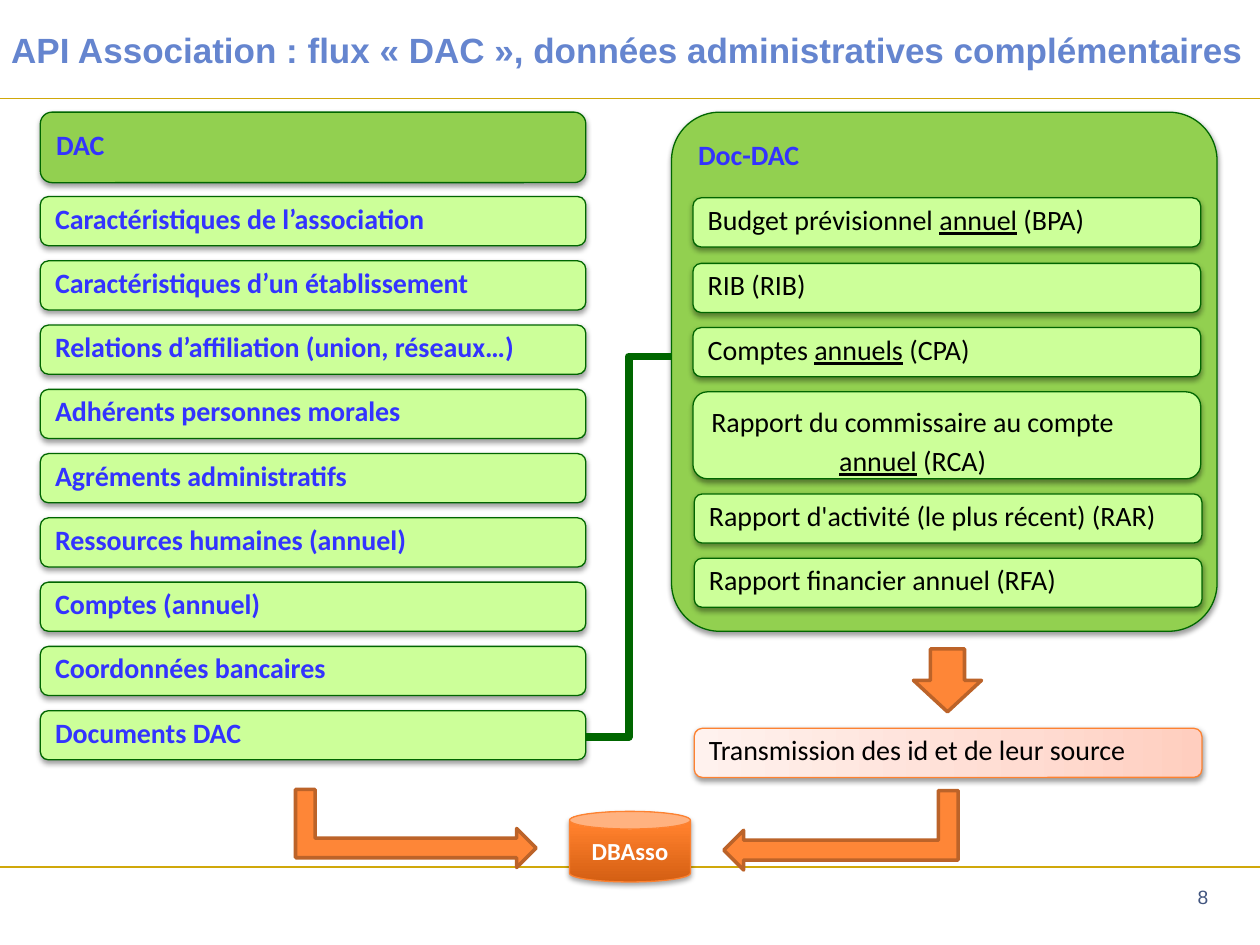
from dataclasses import dataclass

from lxml.etree import SubElement
from pptx import Presentation
from pptx.dml.color import RGBColor
from pptx.enum.shapes import MSO_CONNECTOR, MSO_SHAPE
from pptx.enum.text import MSO_ANCHOR, PP_ALIGN
from pptx.oxml.ns import qn
from pptx.util import Inches, Pt


@dataclass(frozen=True)
class Theme:
    heading_font: str = "Arial"
    body_font: str = "Calibri"
    title_size: int = 20
    body_size: int = 16
    database_size: int = 14
    number_size: int = 11
    title: str = "6585CF"
    number: str = "42557F"
    rule: str = "D0A80A"
    panel: str = "92D050"
    row: str = "CCFF99"
    outline: str = "006600"
    label: str = "3333FF"
    black: str = "000000"
    white: str = "FFFFFF"
    arrow: str = "FE8637"
    arrow_edge: str = "BC6329"
    orange_edge: str = "FD8231"
    pink_stops: tuple = ((0, "FFCEBF"), (35, "FFDCD2"), (100, "FFF2EE"))
    orange_stops: tuple = ((0, "D45F13"), (80, "FF802C"), (100, "FF812E"))


class FlowSlide:
    def __init__(self, slide, theme):
        self.shapes = slide.shapes
        self.theme = theme

    def set_text(self, frame, text, size, color, bold=False, font=None,
                 align=PP_ALIGN.LEFT, spacing=None):
        """Fill a text frame; parts between underscores are underlined."""
        frame.word_wrap = True
        frame.vertical_anchor = MSO_ANCHOR.MIDDLE
        paragraph = frame.paragraphs[0]
        paragraph.alignment = align
        paragraph.line_spacing = spacing
        for index, part in enumerate(text.split("_")):
            run = paragraph.add_run()
            run.text = part
            run.font.name = font or self.theme.body_font
            run.font.size = Pt(size)
            run.font.bold = bold
            run.font.color.rgb = RGBColor.from_string(color)
            if index % 2:
                run.font.underline = True

    def heading(self, left, top, width, height, text, size, color, **style):
        frame = self.shapes.add_textbox(
            Inches(left), Inches(top), Inches(width), Inches(height)).text_frame
        self.set_text(frame, text, size, color, font=self.theme.heading_font, **style)
        return frame

    def solid(self, kind, left, top, width, height, fill, edge, weight):
        shape = self.shapes.add_shape(
            kind, Inches(left), Inches(top), Inches(width), Inches(height))
        shape.shadow.inherit = False
        shape.fill.solid()
        shape.fill.fore_color.rgb = RGBColor.from_string(fill)
        shape.line.color.rgb = RGBColor.from_string(edge)
        shape.line.width = Pt(weight)
        return shape

    def cast_shadow(self, shape, opacity=38):
        effects = shape._element.spPr.find(qn("a:effectLst"))
        shadow = SubElement(effects, qn("a:outerShdw"), blurRad=str(Pt(3.1)),
                            dist=str(Pt(1.6)), dir="5400000", rotWithShape="0")
        tint = SubElement(shadow, qn("a:srgbClr"), val=self.theme.black)
        SubElement(tint, qn("a:alpha"), val=str(opacity * 1000))

    def shade(self, shape, stops, angle):
        shape.fill.gradient()
        shape.fill.gradient_angle = angle
        stop_list = shape._element.spPr.find(".//" + qn("a:gsLst"))
        for stop in list(stop_list):
            stop_list.remove(stop)
        for position, color in stops:
            stop = SubElement(stop_list, qn("a:gs"), pos=str(position * 1000))
            SubElement(stop, qn("a:srgbClr"), val=color)

    def box(self, left, top, width, height, text, color, bold=False, fill=None,
            edge=None, corner=0.167, spacing=0.8):
        theme = self.theme
        shape = self.solid(MSO_SHAPE.ROUNDED_RECTANGLE, left, top, width, height,
                           fill or theme.row, edge or theme.outline, 0.75)
        shape.adjustments[0] = corner
        self.cast_shadow(shape)
        self.set_text(shape.text_frame, text, theme.body_size, color, bold,
                      spacing=spacing)
        return shape

    def arrow(self, kind, left, top, width, height, rotation=0, flipped=False):
        shape = self.solid(kind, left, top, width, height,
                           self.theme.arrow, self.theme.arrow_edge, 2)
        shape.rotation = rotation
        if flipped:
            shape._element.spPr.find(qn("a:xfrm")).set("flipV", "1")

    def database(self, left, top, width, height, text):
        theme = self.theme
        shape = self.solid(MSO_SHAPE.CAN, left, top, width, height,
                           theme.arrow, theme.orange_edge, 0.75)
        self.shade(shape, theme.orange_stops, 90)
        self.cast_shadow(shape, 35)
        self.set_text(shape.text_frame, text, theme.database_size, theme.white, True,
                      align=PP_ALIGN.CENTER)
        shape.text_frame.word_wrap = False

    def line(self, start, end, color, weight, kind=MSO_CONNECTOR.STRAIGHT):
        connector = self.shapes.add_connector(
            kind, *(Inches(value) for value in (*start, *end)))
        connector.line.color.rgb = RGBColor.from_string(color)
        connector.line.width = Pt(weight)
        SubElement(connector._element.spPr, qn("a:effectLst"))


DAC_SECTIONS = [
    "Caractéristiques de l’association",
    "Caractéristiques d’un établissement",
    "Relations d’affiliation (union, réseaux…)",
    "Adhérents personnes morales",
    "Agréments administratifs",
    "Ressources humaines (annuel)",
    "Comptes (annuel)",
    "Coordonnées bancaires",
    "Documents DAC",
]
DOCUMENTS = [
    (5.5, 1.57, "Budget prévisionnel _annuel_ (BPA)"),
    (5.5, 2.09, "RIB (RIB)"),
    (5.5, 2.6, "Comptes _annuels_ (CPA)"),
    (5.51, 3.92, "Rapport d'activité (le plus récent) (RAR)"),
    (5.51, 4.43, "Rapport financier annuel (RFA)"),
]
ROW_HEIGHT, ROW_STEP = 0.39, 0.51
DAC_LEFT, PANEL_LEFT, PANEL_TOP, PANEL_WIDTH = 0.32, 5.33, 0.89, 4.33
DOCUMENT_WIDTH = 4.03


def main():
    presentation = Presentation()
    presentation.slide_width, presentation.slide_height = Inches(10), Inches(7.5)
    theme = Theme()
    page = FlowSlide(
        presentation.slides.add_slide(presentation.slide_layouts[6]), theme)

    for height in (0.78, 6.88):
        page.line((0, height), (10, height), theme.rule, 0.75)
    title = page.heading(
        -0.01, 0, 10.01, 0.78,
        "API Association : flux « DAC », données administratives complémentaires",
        theme.title_size, theme.title, bold=True)
    title.margin_right = 0
    page.heading(7.36, 6.92, 2.33, 0.4, "8", theme.number_size, theme.number,
                 align=PP_ALIGN.RIGHT)

    page.box(DAC_LEFT, PANEL_TOP, PANEL_WIDTH, 0.56, "DAC", theme.label, True,
             theme.panel)
    panel = page.box(PANEL_LEFT, PANEL_TOP, PANEL_WIDTH, 4.12, "Doc-DAC",
                     theme.label, True, theme.panel, corner=0.093)
    panel.text_frame.vertical_anchor = MSO_ANCHOR.TOP
    panel.text_frame.margin_top = Inches(0.14)

    for index, section in enumerate(DAC_SECTIONS):
        page.box(DAC_LEFT, 1.56 + index * ROW_STEP, PANEL_WIDTH, ROW_HEIGHT,
                 section, theme.label, True)
    for left, top, document in DOCUMENTS:
        page.box(left, top, DOCUMENT_WIDTH, ROW_HEIGHT, document, theme.black)

    auditor = page.box(5.5, 3.11, DOCUMENT_WIDTH, 0.69,
                       "Rapport du commissaire au compte _annuel_ (RCA)",
                       theme.black, spacing=1.15).text_frame
    auditor.paragraphs[0].alignment = PP_ALIGN.CENTER
    auditor.margin_right = Inches(0.64)
    auditor.margin_top, auditor.margin_bottom = Inches(0.05), 0

    page.line((4.65, 5.85), (PANEL_LEFT, 2.83), theme.outline, 4.5,
              MSO_CONNECTOR.ELBOW)
    page.arrow(MSO_SHAPE.DOWN_ARROW, 7.25, 5.15, 0.54, 0.5)
    transmission = page.box(5.51, 5.78, DOCUMENT_WIDTH, ROW_HEIGHT,
                            "Transmission des id et de leur source",
                            theme.black, edge=theme.orange_edge)
    page.shade(transmission, theme.pink_stops, 180)

    page.arrow(MSO_SHAPE.BENT_UP_ARROW, 2.99, 5.62, 0.62, 1.91, 90)
    page.database(4.52, 6.44, 0.96, 0.56, "DBAsso")
    page.arrow(MSO_SHAPE.BENT_UP_ARROW, 6.36, 5.66, 0.63, 1.86, 90, flipped=True)

    presentation.save("out.pptx")


if __name__ == "__main__":
    main()
